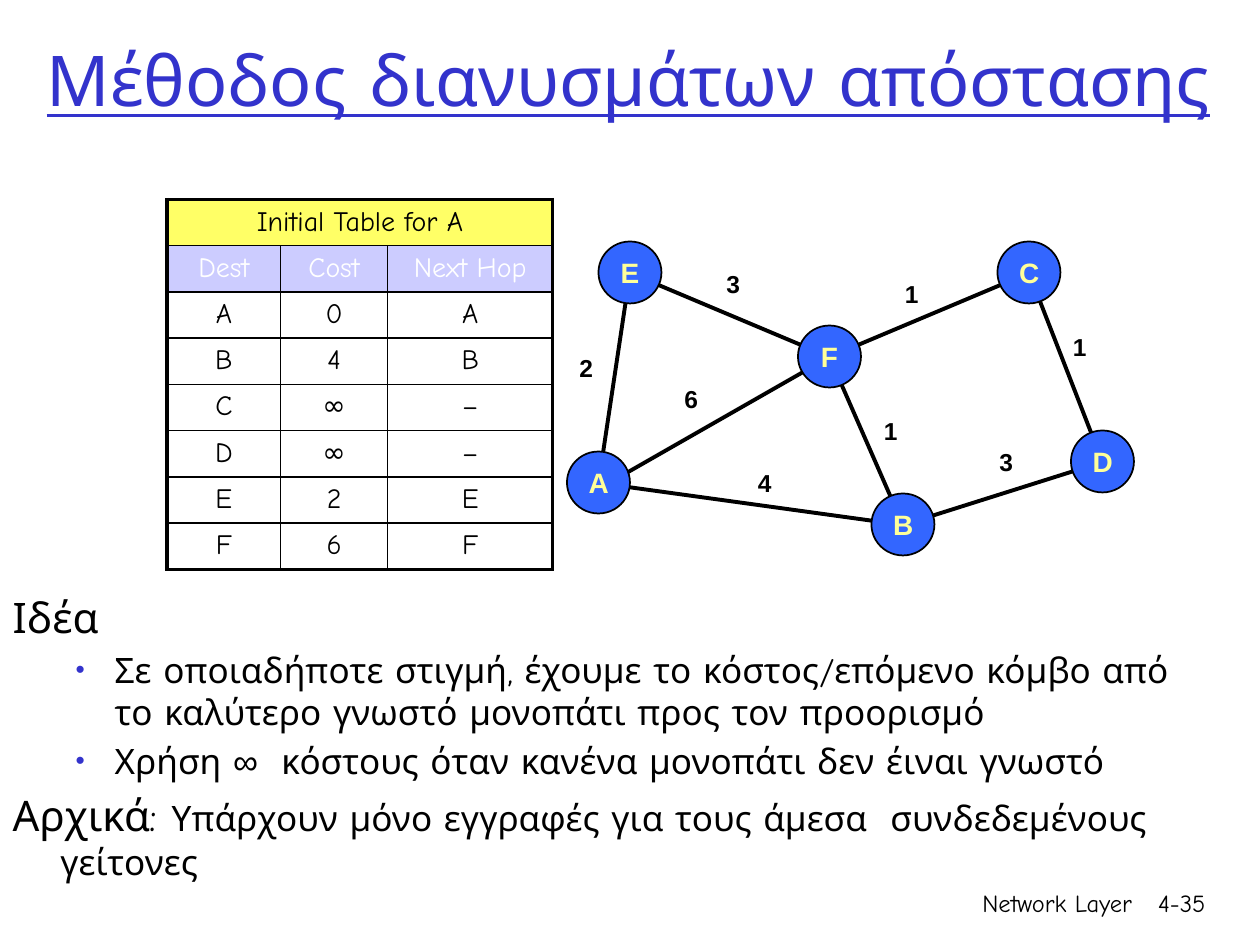
from typing import NamedTuple

from lxml import etree
from pptx import Presentation
from pptx.dml.color import RGBColor
from pptx.enum.shapes import MSO_CONNECTOR, MSO_SHAPE
from pptx.enum.text import MSO_ANCHOR, MSO_AUTO_SIZE, PP_ALIGN
from pptx.oxml import parse_xml
from pptx.oxml.ns import nsdecls, qn
from pptx.util import Emu, Inches, Pt

LEFT, CENTER, RIGHT = PP_ALIGN.LEFT, PP_ALIGN.CENTER, PP_ALIGN.RIGHT
TOP, MIDDLE = MSO_ANCHOR.TOP, MSO_ANCHOR.MIDDLE
NO_FIT = MSO_AUTO_SIZE.NONE
STRAIGHT, OVAL = MSO_CONNECTOR.STRAIGHT, MSO_SHAPE.OVAL
HAND, SANS = "Comic Neue", "Arial"
BLACK, BLUE = "000000", "3333CC"
UNIT = Inches(1) // 12


class Node(NamedTuple):
    col: float
    row: float


class Edge(NamedTuple):
    start: str
    end: str
    cost: str
    col: float
    row: float
    shift: float = 0


class Item(NamedTuple):
    level: int
    runs: list[tuple[str, int, str]]


NODES = {
    "A": Node(57, 46), "E": Node(60, 26), "F": Node(79, 34),
    "C": Node(98, 26), "D": Node(105, 44), "B": Node(86, 50),
}
EDGES = [
    Edge("E", "A", "2", 54, 33), Edge("F", "E", "3", 68, 25),
    Edge("F", "C", "1", 85, 26), Edge("C", "D", "1", 101, 31),
    Edge("B", "D", "3", 94, 42), Edge("B", "F", "1", 83, 39),
    Edge("A", "F", "6", 64, 36, shift=1), Edge("A", "B", "4", 71, 44),
]
ROUTES = [
    ("Initial Table for A", "", ""), ("Dest", "Cost", "Next Hop"),
    ("A", "0", "A"), ("B", "4", "B"), ("C", "∞", "–"),
    ("D", "∞", "–"), ("E", "2", "E"), ("F", "6", "F"),
]
ITEMS = [
    Item(0, [("Ιδέα", 24, HAND)]),
    Item(1, [("Σε οποιαδήποτε στιγμή, έχουμε το κόστος/επόμενο κόμβο από "
              "το καλύτερο γνωστό μονοπάτι προς τον προορισμό", 20, HAND)]),
    Item(1, [("Χρήση ", 20, HAND), ("∞", 20, SANS),
             ("  κόστους όταν κανένα μονοπάτι δεν έιναι γνωστό", 20, HAND)]),
    Item(0, [("Αρχικά: ", 24, HAND),
             ("Υπάρχουν μόνο εγγραφές για τους άμεσα  συνδεδεμένους γείτονες",
              20, HAND)]),
]


def grid(n: float) -> Emu:
    return Emu(round(n * UNIT))


def color(value: str) -> RGBColor:
    return RGBColor.from_string(value)


def add_run(p, text: str, size: int, font: str = HAND, hue: str = BLACK,
            bold: bool = False):
    r = p.add_run()
    r.text = text
    r.font.size, r.font.name, r.font.bold = Pt(size), font, bold
    r.font.color.rgb = color(hue)
    if font == SANS:
        for script in ("a:ea", "a:cs", "a:sym"):
            if script != "a:sym":
                etree.SubElement(r._r.get_or_add_rPr(), qn(script), typeface=font)
    return r


def place(sp, col: float, row: float, width: float, height: float) -> None:
    sp.left, sp.top, sp.width, sp.height = map(grid, (col, row, width, height))


def add_label(s, text: str, col: float, row: float, width: float, height: float,
              font: str, bold: bool = False, align=LEFT, wrap: bool = True) -> None:
    tf = s.shapes.add_textbox(*map(grid, (col, row, width, height))).text_frame
    tf.word_wrap = wrap
    p = tf.paragraphs[0]
    p.alignment = align
    add_run(p, text, 14, font, bold=bold)


def add_edge(s, edge: Edge) -> None:
    a, b = NODES[edge.start], NODES[edge.end]
    ends = (a.col + edge.shift, a.row, b.col, b.row)
    line = s.shapes.add_connector(STRAIGHT, *map(grid, ends))
    line.line.color.rgb = color(BLACK)
    line.line.width = Pt(2.25)
    etree.SubElement(line._element.spPr, qn("a:effectLst"))


def add_node(s, name: str, node: Node) -> None:
    sp = s.shapes.add_shape(OVAL, *map(grid, (node.col - 3, node.row - 3, 6, 5.9)))
    sp.shadow.inherit = False
    sp.fill.solid()
    sp.fill.fore_color.rgb = color("3366FF")
    sp.line.color.rgb = color(BLACK)
    sp.line.width = Pt(1)
    tf = sp.text_frame
    tf.vertical_anchor = MIDDLE
    p = tf.paragraphs[0]
    p.alignment = CENTER
    add_run(p, name, 16, SANS, "FFFF99", True)


def set_borders(cell, outer: dict[str, bool]) -> None:
    tc_pr = cell._tc.get_or_add_tcPr()
    for side in ("L", "R", "T", "B"):
        width = Pt(2.25 if outer[side] else 1)
        tc_pr.append(parse_xml(
            f'<a:ln{side} {nsdecls("a")} w="{width}"><a:solidFill>'
            f'<a:srgbClr val="{BLACK}"/></a:solidFill></a:ln{side}>'))


def add_routes(s) -> None:
    last = len(ROUTES) - 1
    table = s.shapes.add_table(len(ROUTES), 3,
                               *map(grid, (15.92, 19, 36.7, 35.2))).table
    table.first_row = table.horz_banding = False
    for column, width in zip(table.columns, (0.9, 0.85, 1.31)):
        column.width = Inches(width)
    table.cell(0, 0).merge(table.cell(0, 2))
    looks = {0: ("FFFF66", BLACK), 1: ("CCCCFF", "FFFFFF")}
    for i, texts in enumerate(ROUTES):
        fill, hue = looks.get(i, (None, BLACK))
        for j, text in enumerate(texts):
            cell = table.cell(i, j)
            set_borders(cell, {"L": j == 0, "R": j == 2 or i == 0,
                               "T": i == 0, "B": i == last})
            if fill:
                cell.fill.solid()
                cell.fill.fore_color.rgb = color(fill)
            else:
                cell.fill.background()
            if text:
                p = cell.text_frame.paragraphs[0]
                p.alignment = CENTER
                add_run(p, text, 16, hue=hue)


def format_item(p, item: Item) -> None:
    p.level = item.level
    p.alignment = LEFT
    p_pr = p._p.get_or_add_pPr()
    margin, indent = ((0.38, -0.38), (0.81, -0.31))[item.level]
    p_pr.set("marL", str(Inches(margin)))
    p_pr.set("indent", str(Inches(indent)))
    if item.level:
        hue = etree.SubElement(p_pr, qn("a:buClr"))
        etree.SubElement(hue, qn("a:srgbClr"), val=BLUE)
        etree.SubElement(p_pr, qn("a:buSzPct"), val="75000")
        etree.SubElement(p_pr, qn("a:buChar"), char="•")
    else:
        etree.SubElement(p_pr, qn("a:buNone"))
    for text, size, font in item.runs:
        add_run(p, text, size, font)


def add_title(s) -> None:
    sp = s.shapes.title
    place(sp, 3.25, 0, 116.75, 15)
    tf = sp.text_frame
    tf.auto_size, tf.vertical_anchor = NO_FIT, MIDDLE
    p = tf.paragraphs[0]
    p.alignment = LEFT
    add_run(p, "Μέθοδος διανυσμάτων απόστασης", 40, hue=BLUE).font.underline = True


def add_body(s) -> None:
    sp = s.placeholders[1]
    place(sp, 0, 55.7, 116.5, 29.4)
    tf = sp.text_frame
    tf.auto_size, tf.vertical_anchor = NO_FIT, TOP
    for i, item in enumerate(ITEMS):
        format_item(tf.add_paragraph() if i else tf.paragraphs[0], item)


def main() -> None:
    prs = Presentation()
    prs.slide_width, prs.slide_height = grid(120), grid(90)
    s = prs.slides.add_slide(prs.slide_layouts[1])
    add_title(s)
    add_body(s)
    add_label(s, "Network Layer", 71, 84, 38, 6, HAND, align=RIGHT)
    add_label(s, "4-35", 107.1, 84, 8.9, 6, HAND, align=RIGHT)
    for edge in EDGES:
        add_edge(s, edge)
    for name, node in NODES.items():
        add_node(s, name, node)
    for edge in EDGES:
        add_label(s, edge.cost, edge.col, edge.row, 3.7, 4, SANS, True, wrap=False)
    add_routes(s)
    prs.save("out.pptx")


if __name__ == "__main__":
    main()
